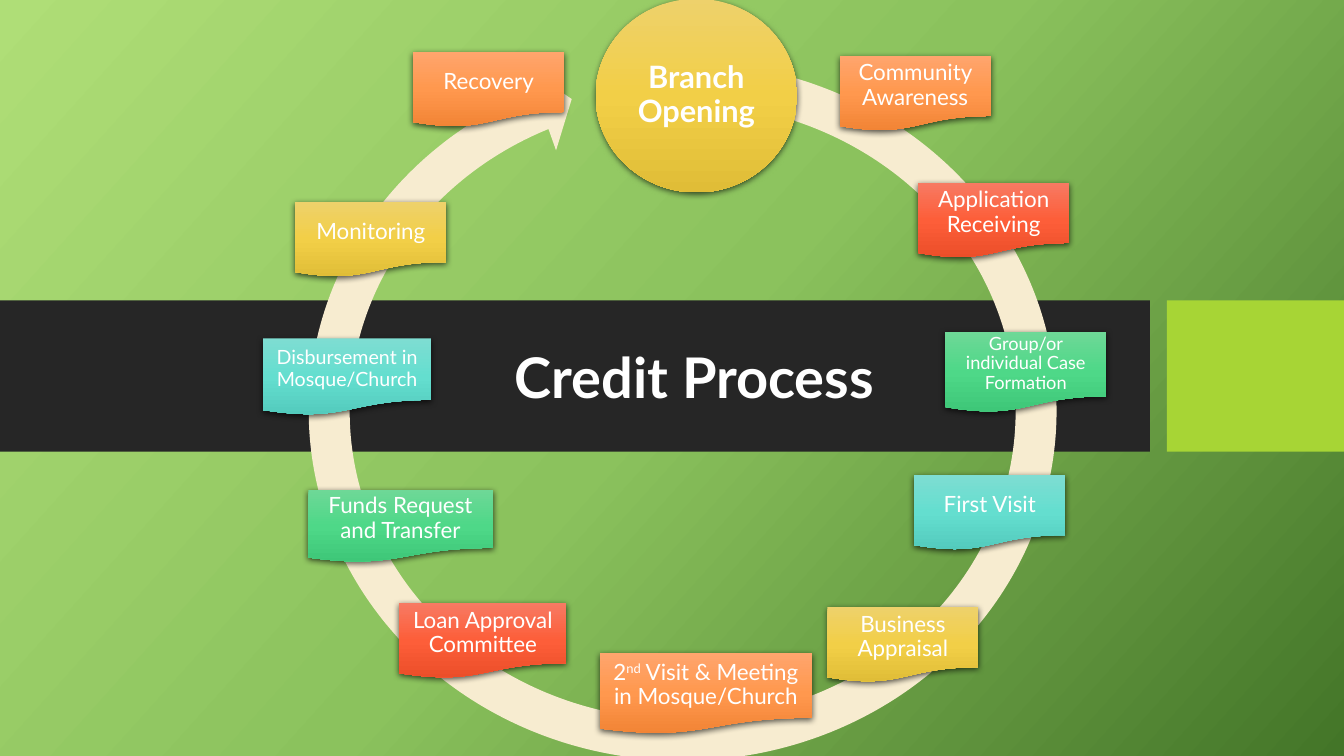
from copy import deepcopy

from lxml import etree
from pptx import Presentation
from pptx import util as u
from pptx.dml.color import RGBColor
from pptx.enum import shapes, text
from pptx.oxml.ns import qn

YELLOW = ("EED16B", "F2CF47", "E0BD37")
ORANGE = ("FFA56D", "FF984E", "F28435")
RED = ("F77A63", "FD5E39", "EB4E29")
GREEN = ("6ED897", "4ED888", "3EC778")
TEAL = ("7EDDD2", "64DECF", "53CBBD")
CYCLE = (ORANGE, RED, GREEN, TEAL, YELLOW)


def paint(fill, colours, angle=90):
    """Fill solid with one colour, or with an even gradient (clockwise angle)."""
    if len(colours) == 1:
        fill.solid()
        fill.fore_color.rgb = RGBColor.from_string(colours[0])
        return
    fill.gradient()
    fill.gradient_angle = 360 - angle
    first = fill.gradient_stops[0]._gs
    first.addnext(deepcopy(first))
    for index, (stop, colour) in enumerate(zip(fill.gradient_stops, colours)):
        stop.position = index / 2
        stop.color.rgb = RGBColor.from_string(colour)


def add_box(kind, left, top, width, height, colours, label="", size=16, bold=False):
    """Add a borderless shape; a labelled one gets white text and a soft shadow."""
    box = page.shapes.add_shape(kind, *map(u.Cm, (left, top, width, height)))
    paint(box.fill, colours)
    box.line.fill.background()
    box.shadow.inherit = False
    if not label:
        return box
    effects = box._element.spPr.find(qn("a:effectLst"))
    shadow = etree.SubElement(effects, qn("a:outerShdw"), blurRad="57150", dist="19050",
                              dir="5400000", algn="ctr", rotWithShape="0")
    black = etree.SubElement(shadow, qn("a:srgbClr"), val="000000")
    etree.SubElement(black, qn("a:alpha"), val="63000")

    frame = box.text_frame
    frame.word_wrap = True
    frame.vertical_anchor = text.MSO_ANCHOR.MIDDLE
    inset = u.Cm(size * 0.011)
    frame.margin_left = frame.margin_right = inset
    frame.margin_top = frame.margin_bottom = inset
    para = frame.paragraphs[0]
    para.alignment = text.PP_ALIGN.CENTER
    para.line_spacing = 0.9
    para.font.name, para.font.size, para.font.bold = "Lato", u.Pt(size), bold
    para.font.color.rgb = RGBColor.from_string("FFFFFF")
    # The part between carets is raised
    for index, part in enumerate(label.split("^")):
        span = para.add_run()
        span.text = part
        if index == 1:
            span.font._element.set("baseline", "30000")
    return box


deck = Presentation()
deck.slide_width, deck.slide_height = u.Cm(33.87), u.Cm(19.05)
page = deck.slides.add_slide(deck.slide_layouts[5])
paint(page.background.fill, ("AFDE77", "8BC25D", "437528"), 42)

# Title band
add_box(shapes.MSO_SHAPE.RECTANGLE, 0, 7.57, 28.98, 3.81, ["262626"])
add_box(shapes.MSO_SHAPE.RECTANGLE, 29.41, 7.57, 4.46, 3.81, ["A7D535"])

# Process ring and its starting point
ring = add_box(shapes.MSO_SHAPE.CIRCULAR_ARROW, 7.21, 0.99, 19.99, 18.75, ["F7ECD0"])
for index, value in enumerate((0.055, 3.307, 146.96, 168.478, 0.058)):
    ring.adjustments[index] = value
add_box(shapes.MSO_SHAPE.OVAL, 15.01, -0.03, 5.08, 4.88, YELLOW,
        "Branch Opening", 22, True)

# Steps, clockwise: label, left, top, width, height, text size
steps = [
    ("Community Awareness", 21.16, 1.4, 3.81, 1.9, 16),
    ("Application Receiving", 23.14, 4.6, 3.81, 1.9, 16),
    ("Group/or individual Case Formation", 23.82, 8.36, 4.06, 2.03, 13),
    ("First Visit", 23.04, 11.96, 3.81, 1.9, 16),
    ("Business Appraisal", 20.85, 15.29, 3.81, 1.9, 16),
    ("2^nd^ Visit & Meeting in Mosque/Church", 15.11, 16.46, 5.36, 2.03, 16),
    ("Loan Approval Committee", 10.06, 15.19, 4.22, 1.9, 16),
    ("Funds Request and Transfer", 7.77, 12.34, 4.65, 1.83, 16),
    ("Disbursement in Mosque/Church", 6.63, 8.53, 4.24, 1.93, 14),
    ("Monitoring", 7.44, 5.08, 3.81, 1.9, 16),
    ("Recovery", 10.41, 1.3, 3.81, 1.9, 16),
]
for index, (label, left, top, width, height, size) in enumerate(steps):
    add_box(shapes.MSO_SHAPE.FLOWCHART_DOCUMENT, left, top, width, height,
            CYCLE[index % len(CYCLE)], label, size)

# Title, brought in front of the band
title = page.shapes.title
title.left, title.top, title.width, title.height = map(u.Cm, (11.15, 5.89, 12.7, 7.04))
frame = title.text_frame
frame.text = "Credit Process"
frame.word_wrap = True
frame.auto_size = text.MSO_AUTO_SIZE.NONE
frame.vertical_anchor = text.MSO_ANCHOR.MIDDLE
frame.margin_top = frame.margin_bottom = 0
para = frame.paragraphs[0]
para.alignment = text.PP_ALIGN.CENTER
para.line_spacing = 1.07
para.font.name, para.font.size, para.font.bold = "Lato", u.Pt(40), True
para.font.color.rgb = RGBColor.from_string("FFFFFF")
title._element.getparent().append(title._element)

deck.save("out.pptx")
